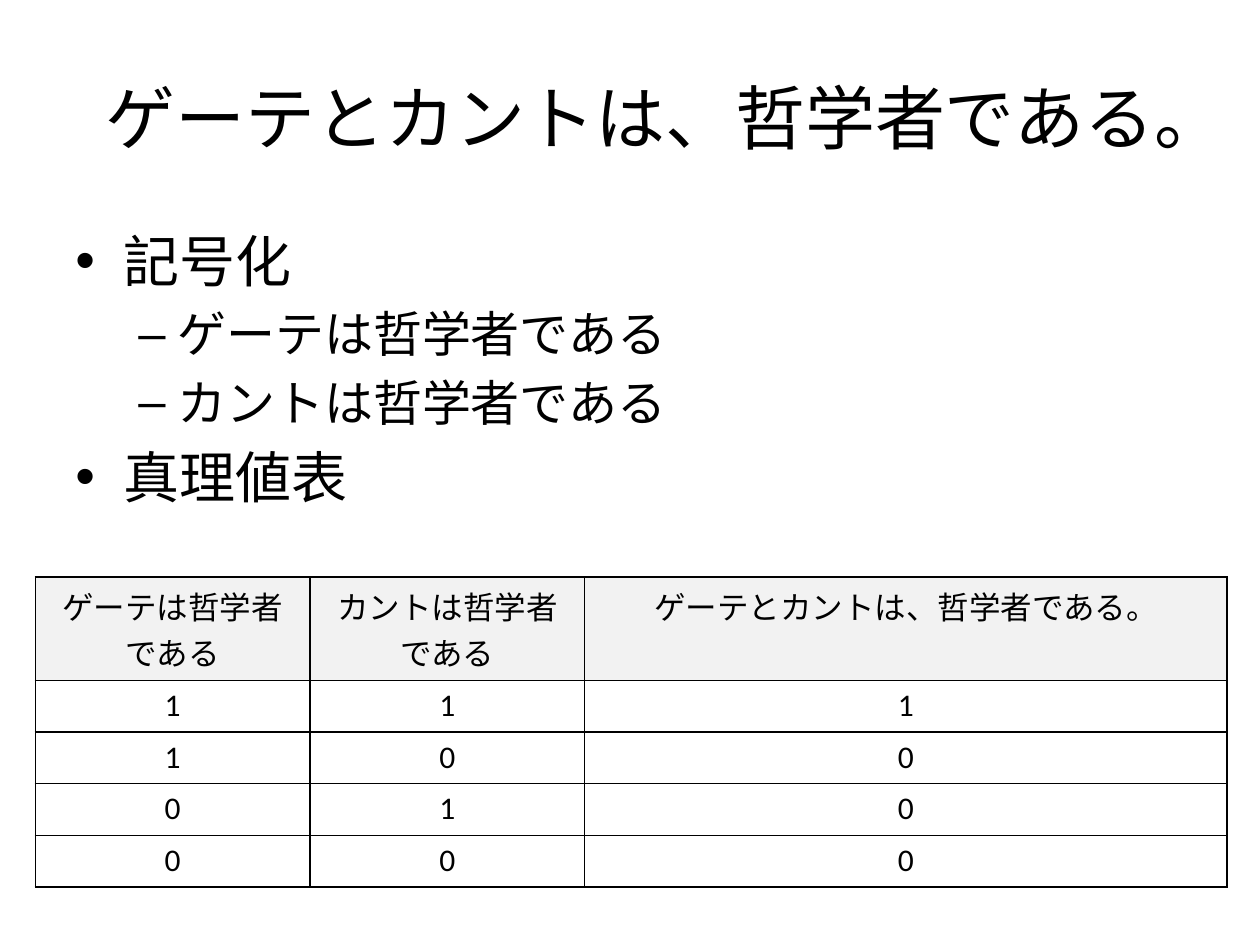
"""Build a slide with a logic example and its truth table."""
from itertools import product
from lxml.etree import SubElement
from pptx import Presentation
from pptx.dml.color import RGBColor
from pptx.enum.text import MSO_ANCHOR, PP_ALIGN
from pptx.oxml.ns import qn
from pptx.util import Inches, Pt

BLACK = RGBColor(0x00, 0x00, 0x00)
WHITE = RGBColor(0xFF, 0xFF, 0xFF)
GRAY = RGBColor(0xF2, 0xF2, 0xF2)

GOETHE = "ゲーテは哲学者である"
KANT = "カントは哲学者である"
BOTH = "ゲーテとカントは、哲学者である。"


def style(para, size, align):
    para.alignment = align
    for run in para.runs:
        run.font.size = Pt(size)
        run.font.name = "Calibri"
        run.font.bold = False
        run.font.color.rgb = BLACK


def edge(cell):
    props = cell._tc.get_or_add_tcPr()
    for spot, side in enumerate(("a:lnL", "a:lnR", "a:lnT", "a:lnB")):
        line = SubElement(props, qn(side), w=str(Pt(1)))
        fill = SubElement(line, qn("a:solidFill"))
        SubElement(fill, qn("a:srgbClr"), val=str(BLACK))
        props.insert(spot, line)


deck = Presentation()
deck.slide_width, deck.slide_height = Inches(10), Inches(7.5)
wide, high = deck.slide_width, deck.slide_height
slide = deck.slides.add_slide(deck.slide_layouts[6])
shapes = slide.shapes
left, span = int(wide * 0.05), int(wide * 0.9)

title = shapes.add_textbox(left, int(high * 0.04), span, Inches(1.25)).text_frame
title.word_wrap = True
title.vertical_anchor = MSO_ANCHOR.MIDDLE
title.text = BOTH
style(title.paragraphs[0], 40, PP_ALIGN.CENTER)

body = shapes.add_textbox(left, Inches(1.75), span, int(high * 0.66)).text_frame
body.word_wrap = True
items = [("記号化", 0), (GOETHE, 1), (KANT, 1), ("真理値表", 0)]
levels = [(32, 0.38, 0.38, "•"), (28, 0.81, 0.31, "–")]
body.text = "\n".join(text for text, level in items)
for para, (text, level) in zip(body.paragraphs, items):
    size, inset, hang, mark = levels[level]
    para.level = level
    para.space_before = Pt(size * 0.2)
    style(para, size, PP_ALIGN.LEFT)
    props = para._p.get_or_add_pPr()
    props.set("marL", str(Inches(inset)))
    props.set("indent", str(-Inches(hang)))
    SubElement(props, qn("a:buFont"), typeface="Arial")
    SubElement(props, qn("a:buChar"), char=mark)

rows = [(GOETHE, KANT, BOTH)]
rows += [(a, b, a & b) for a, b in product((1, 0), repeat=2)]
cols = (2.18, 2.18, 5.1)
unit = Inches(0.41)
table = shapes.add_table(len(rows), len(cols), Inches(0.28), Inches(4.58),
                         Inches(sum(cols)), unit * len(rows)).table
table.first_row = table.horz_banding = False
for col, width in zip(table.columns, cols):
    col.width = Inches(width)
for r, row in enumerate(rows):
    table.rows[r].height = unit if r else unit * 2
    for c, value in enumerate(row):
        cell = table.cell(r, c)
        cell.text_frame.text = str(value)
        style(cell.text_frame.paragraphs[0], 18, PP_ALIGN.CENTER)
        cell.fill.solid()
        cell.fill.fore_color.rgb = WHITE if r else GRAY
        edge(cell)

deck.save("out.pptx")
